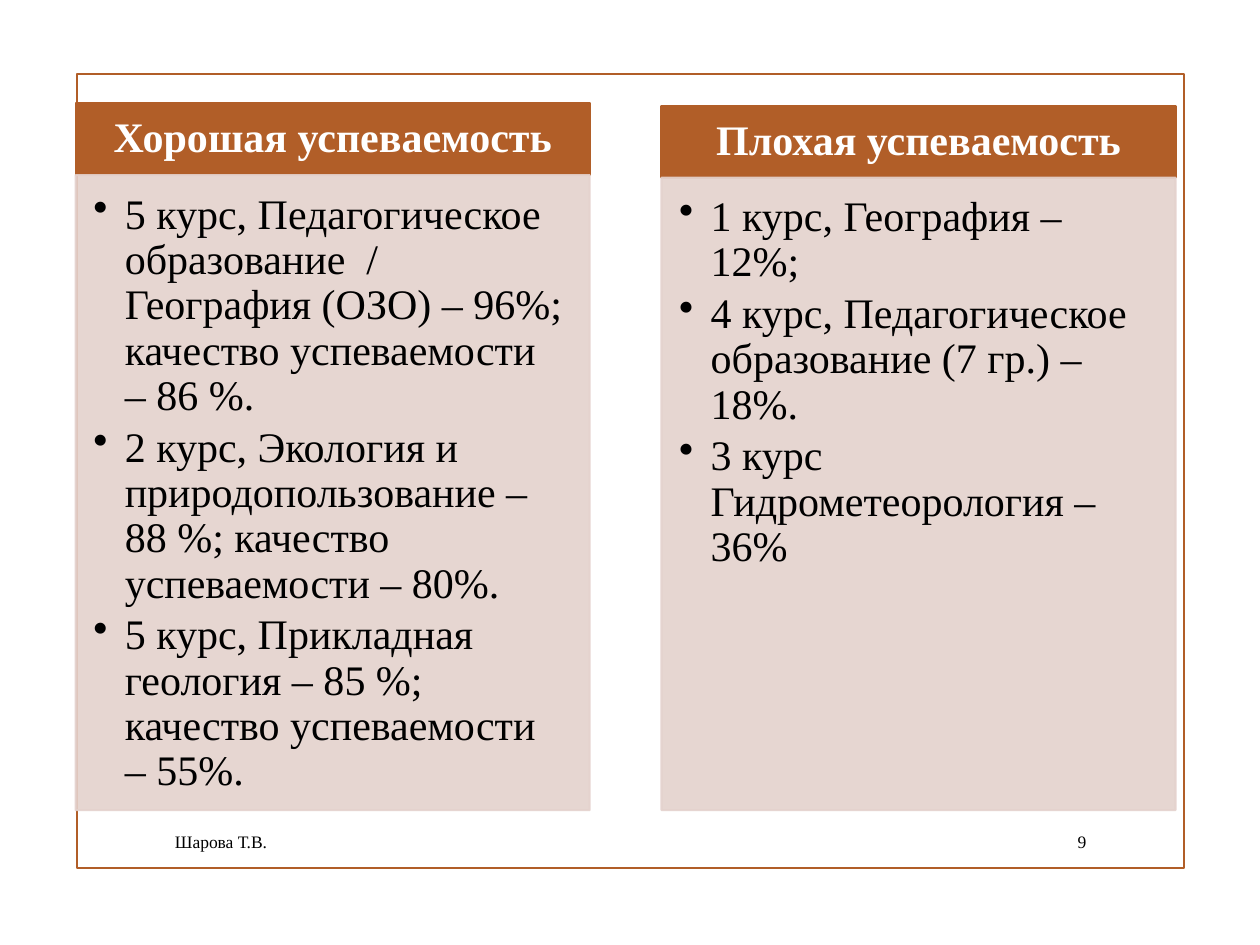
"""Build a slide comparing good and poor student performance by course."""
from lxml.etree import SubElement as Sub
from pptx import Presentation
from pptx.dml.color import RGBColor
from pptx.enum.shapes import MSO_SHAPE as Shape
from pptx.enum.text import MSO_ANCHOR as Anchor, PP_ALIGN as Align
from pptx.oxml.ns import qn
from pptx.util import Inches, Pt

RUST, PINK, BLACK, WHITE = "B15E28", "E4D2CD", "000000", "FFFFFF"
FONT = "Times New Roman"
LEFT, WIDTH, STEP, HEAD = 0.6, 4.08, 4.65, 0.57


def box(place, fill=None, line=RUST, alpha=None):
    rect = slide.shapes.add_shape(Shape.RECTANGLE, *map(Inches, place))
    rect.shadow.inherit = False
    if fill:
        rect.fill.solid()
        rect.fill.fore_color.rgb = RGBColor.from_string(fill)
    else:
        rect.fill.background()
    rect.line.color.rgb = RGBColor.from_string(line)
    rect.line.width = Pt(1.25)
    if alpha:
        for tint in rect.element.spPr.iter(qn("a:srgbClr")):
            Sub(tint, qn("a:alpha"), val=str(alpha * 1000))
    return rect


def write(shape, lines, size, color, align=Align.LEFT, anchor=Anchor.MIDDLE,
          inset=(0.1, 0.05, 0.1, 0.05), bold=False, bullet=False, after=0):
    frame = shape.text_frame
    frame.word_wrap = True
    frame.vertical_anchor = anchor
    (frame.margin_left, frame.margin_top,
     frame.margin_right, frame.margin_bottom) = map(Inches, inset)
    for i, line in enumerate(lines):
        para = frame.paragraphs[0] if i == 0 else frame.add_paragraph()
        para.alignment = align
        if after:
            para.line_spacing = 0.9
            para.space_after = Pt(after)
        if bullet:
            para.level = 1
            props = para._p.get_or_add_pPr()
            props.set("marL", str(Inches(0.25)))
            props.set("indent", str(Inches(-0.25)))
            Sub(props, qn("a:buChar"), char="•")
        run = para.add_run()
        run.text = line
        run.font.name = FONT
        run.font.size = Pt(size)
        run.font.bold = bold
        run.font.color.rgb = RGBColor.from_string(color)


deck = Presentation()
deck.slide_width, deck.slide_height = Inches(10), Inches(7.5)
slide = deck.slides.add_slide(deck.slide_layouts[6])

box((0.61, 0.59, 8.79, 6.3))

groups = [
    ("Хорошая успеваемость", 0.82, 5.04, [
        "5 курс, Педагогическое образование  / География (ОЗО) – 96%; "
        "качество успеваемости – 86 %.",
        "2 курс, Экология и природопользование – 88 %; "
        "качество успеваемости – 80%.",
        "5 курс, Прикладная геология – 85 %; качество успеваемости – 55%."]),
    ("Плохая успеваемость", 0.84, 5.02, [
        "1 курс, География – 12%;",
        "4 курс, Педагогическое образование (7 гр.) – 18%.",
        "3 курс Гидрометеорология – 36%"]),
]
for col, (name, top, tall, items) in enumerate(groups):
    left = LEFT + col * STEP
    head = box((left, top, WIDTH, HEAD), RUST)
    write(head, [name], 24, WHITE, Align.CENTER, bold=True, after=8.4,
          inset=(0.19, 0.11, 0.19, 0.11))
    body = box((left, top + HEAD, WIDTH, tall), PINK, PINK, 90)
    write(body, items, 24, BLACK, anchor=Anchor.TOP, bullet=True, after=3.6,
          inset=(0.14, 0.14, 0.19, 0.21))

for label, left, width, align in [("Шарова Т.В.", 1.29, 5.58, Align.LEFT),
                                  ("9", 8.29, 0.43, Align.RIGHT)]:
    note = slide.shapes.add_textbox(*map(Inches, (left, 6.52, width, 0.31)))
    write(note, [label], 10, BLACK, align)

deck.save("out.pptx")
